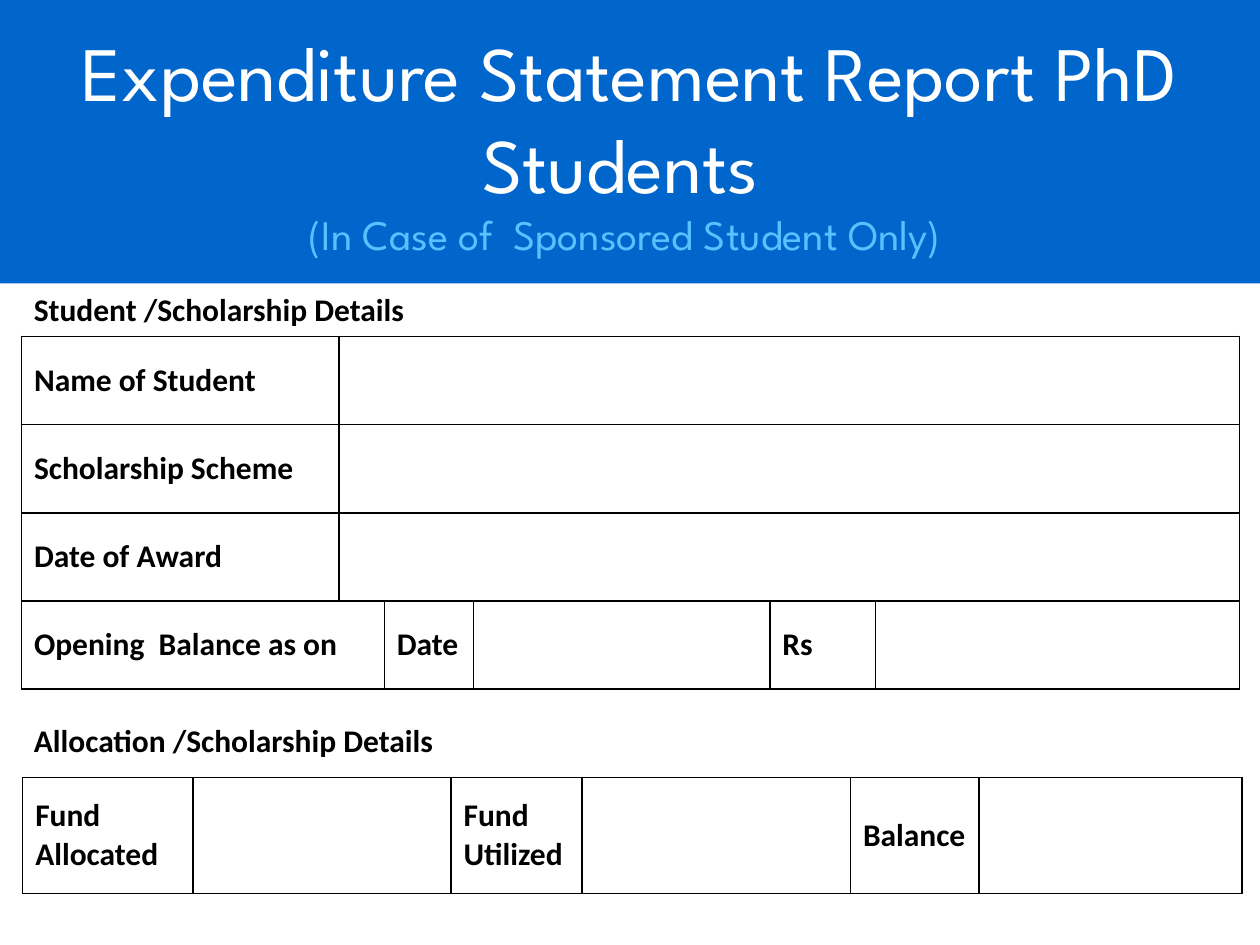
from dataclasses import dataclass

from lxml import etree
from pptx import Presentation
from pptx.dml.color import RGBColor
from pptx.enum.shapes import MSO_SHAPE
from pptx.enum.text import MSO_ANCHOR, MSO_AUTO_SIZE, PP_ALIGN
from pptx.oxml.ns import qn
from pptx.util import Inches, Pt

RECT = MSO_SHAPE.RECTANGLE
MIDDLE = MSO_ANCHOR.MIDDLE
CENTER = PP_ALIGN.CENTER
GROW = MSO_AUTO_SIZE.SHAPE_TO_FIT_TEXT


@dataclass(frozen=True)
class Theme:
    banner: str = "0066CC"
    title: str = "FFFFFF"
    subtitle: str = "59C1FF"
    ink: str = "000000"
    title_font: str = "League Spartan"
    body_font: str = "Calibri"
    title_size: int = 44
    subtitle_size: int = 24
    body_size: int = 18
    border: int = 1


THEME = Theme()
TITLE = {"name": THEME.title_font, "size": THEME.title_size, "color": THEME.title}
SUBTITLE = {"name": THEME.title_font, "size": THEME.subtitle_size, "color": THEME.subtitle}
BODY = {"name": THEME.body_font, "size": THEME.body_size, "color": THEME.ink, "bold": True}


@dataclass(frozen=True)
class Heading:
    text: str
    top: float


@dataclass(frozen=True)
class Grid:
    left: float
    top: float
    cols: tuple[float, ...]
    row_height: float
    rows: int
    labels: dict[tuple[int, int], str]
    merges: tuple[tuple[int, int, int], ...] = ()  # row, first column, last column


HEADINGS = (
    Heading("Student /Scholarship Details", 2.25),
    Heading("Allocation /Scholarship Details", 5.67),
)

STUDENT = Grid(
    0.17, 2.67, (2.52, 0.36, 0.71, 2.35, 0.84, 2.89), 0.7, 4,
    {(0, 0): "Name of Student", (1, 0): "Scholarship Scheme", (2, 0): "Date of Award",
     (3, 0): "Opening  Balance as on", (3, 2): "Date", (3, 4): "Rs"},
    ((0, 1, 5), (1, 1, 5), (2, 1, 5), (3, 0, 1)),
)
ALLOCATION = Grid(
    0.18, 6.17, (1.35, 2.05, 1.04, 2.13, 1.02, 2.09), 0.92, 1,
    {(0, 0): "Fund Allocated", (0, 2): "Fund Utilized", (0, 4): "Balance"},
)


def add_run(p, text: str, fmt: dict) -> None:
    r = p.add_run()
    r.text = text
    for key, value in fmt.items():
        if key == "color":
            r.font.color.rgb = RGBColor.from_string(value)
        else:
            setattr(r.font, key, Pt(value) if key == "size" else value)


def set_borders(cell) -> None:
    tc_pr = cell._tc.get_or_add_tcPr()
    for side in ("lnL", "lnR", "lnT", "lnB"):
        ln = etree.SubElement(tc_pr, qn(f"a:{side}"), w=str(Pt(THEME.border)))
        fill = etree.SubElement(ln, qn("a:solidFill"))
        etree.SubElement(fill, qn("a:srgbClr"), val=THEME.ink)


def add_banner(s) -> None:
    sp = s.shapes.add_shape(RECT, 0, 0, Inches(10), Inches(2.25))
    sp.shadow.inherit = False
    sp.fill.solid()
    sp.fill.fore_color.rgb = RGBColor.from_string(THEME.banner)
    sp.line.fill.background()
    tf = sp.text_frame
    tf.word_wrap = True
    tf.vertical_anchor = MIDDLE
    lines = (("Expenditure Statement Report PhD Students ", TITLE),
             ("(In Case of  Sponsored Student Only) ", SUBTITLE))
    for i, (text, fmt) in enumerate(lines):
        p = tf.add_paragraph() if i else tf.paragraphs[0]
        p.alignment = CENTER
        add_run(p, text, fmt)


def add_heading(s, heading: Heading) -> None:
    sp = s.shapes.add_textbox(Inches(0.17), Inches(heading.top), Inches(4.42), Inches(0.4))
    tf = sp.text_frame
    tf.word_wrap = True
    tf.auto_size = GROW
    add_run(tf.paragraphs[0], heading.text, BODY)


def add_grid(s, grid: Grid) -> None:
    frame = s.shapes.add_table(
        grid.rows, len(grid.cols), Inches(grid.left), Inches(grid.top),
        Inches(sum(grid.cols)), Inches(grid.row_height * grid.rows))
    table = frame.table
    table.first_row = table.horz_banding = False
    for col, width in zip(table.columns, grid.cols):
        col.width = Inches(width)
    for row in table.rows:
        row.height = Inches(grid.row_height)
    for cell in table.iter_cells():
        set_borders(cell)
        cell.fill.background()
        cell.vertical_anchor = MIDDLE
    for row, first, last in grid.merges:
        table.cell(row, first).merge(table.cell(row, last))
    for position, text in grid.labels.items():
        add_run(table.cell(*position).text_frame.paragraphs[0], text, BODY)


def main() -> None:
    prs = Presentation()
    prs.slide_width, prs.slide_height = Inches(10), Inches(7.5)
    s = prs.slides.add_slide(prs.slide_layouts[6])

    # Title banner
    add_banner(s)

    # Form tables
    for grid in (STUDENT, ALLOCATION):
        add_grid(s, grid)

    # Section headings
    for heading in HEADINGS:
        add_heading(s, heading)

    prs.save("out.pptx")


if __name__ == "__main__":
    main()
